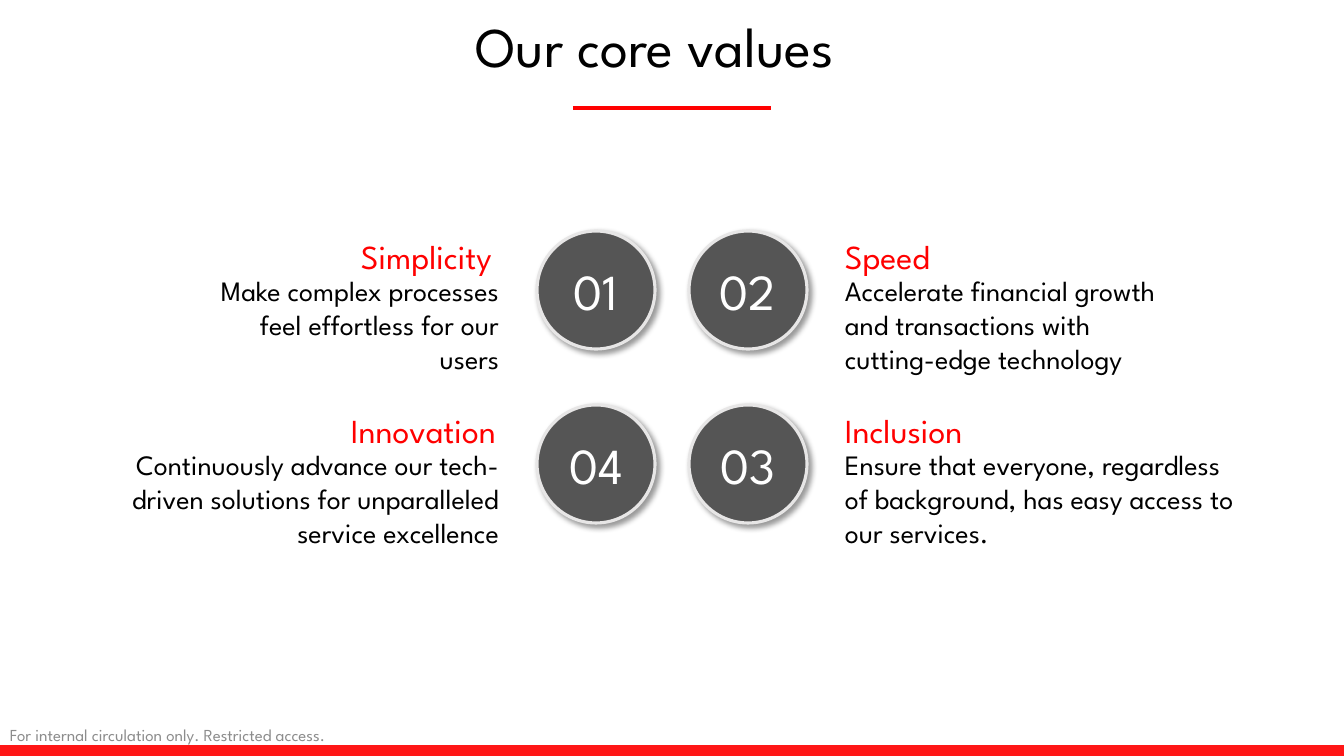
import pptx
import pptx.util
import pptx.dml.color
import pptx.enum.shapes
import pptx.enum.text
import pptx.oxml
import pptx.oxml.ns
from collections import namedtuple

RGBColor = pptx.dml.color.RGBColor
ALIGN = pptx.enum.text.PP_ALIGN
ANCHOR = pptx.enum.text.MSO_ANCHOR
SHAPE = pptx.enum.shapes.MSO_SHAPE

BLACK = RGBColor(0x00, 0x00, 0x00)
WHITE = RGBColor(0xFF, 0xFF, 0xFF)
RED = RGBColor(0xFF, 0x00, 0x00)
BAR_RED = RGBColor(0xFF, 0x16, 0x16)
DARK_GRAY = RGBColor(0x55, 0x55, 0x55)
RIM_GRAY = RGBColor(0xE7, 0xE6, 0xE6)
NOTE_GRAY = RGBColor(0x8C, 0x8C, 0x8C)

FONT = "League Spartan"
PAGE_WIDTH, PAGE_HEIGHT = 1344, 756
EMU_PER_PX = 12192000 / PAGE_WIDTH

CIRCLE = 118
BODY_DROP = 38    # from heading top to body top
TEXT_GAP = 28     # between a circle and its body text
ROW_TOPS = (231, 405)
LEFT_COLUMN, LEFT_WIDTH = 111, 544
RIGHT_COLUMN, RIGHT_WIDTH = 689, 556

Box = namedtuple("Box", "left top width height")
# heading_left counts from the left edge of the value's box
Value = namedtuple("Value", "number heading body heading_left body_width")

LEFT_VALUES = (
    Value("01", "Simplicity",
          "Make complex processes feel effortless for our users", 240, 308),
    Value("04", "Innovation",
          "Continuously advance our tech-driven solutions for unparalleled service excellence",
          230, 398),
)
RIGHT_VALUES = (
    Value("02", "Speed",
          "Accelerate financial growth and transactions with cutting-edge technology", 146, 355),
    Value("03", "Inclusion",
          "Ensure that everyone, regardless of background, has easy access to our services.",
          146, 410),
)


def px(length):
    return pptx.util.Emu(round(length * EMU_PER_PX))


def write(frame, text, size, color, align, anchor):
    frame.word_wrap = True
    frame.vertical_anchor = anchor
    para = frame.paragraphs[0]
    para.text = text
    para.alignment = align
    para.font.name = FONT
    para.font.size = pptx.util.Pt(size)
    para.font.color.rgb = color
    return para


def add_text(page, box, text, size, color, align=ALIGN.LEFT, anchor=ANCHOR.TOP):
    label = page.shapes.add_textbox(*map(px, box))
    return write(label.text_frame, text, size, color, align, anchor)


def add_soft_shadow(shape):
    namespace = pptx.oxml.ns.nsdecls("a")
    effects = pptx.oxml.parse_xml(
        f'<a:effectLst {namespace}>'
        '<a:outerShdw blurRad="50800" dist="38100" dir="2700000" algn="tl" rotWithShape="0">'
        '<a:srgbClr val="000000"><a:alpha val="40000"/></a:srgbClr>'
        '</a:outerShdw></a:effectLst>')
    shape._element.spPr.append(effects)


def add_header(page, box):
    # Title
    title_box = Box(box.left + 168, box.top, 973, 98)
    title = add_text(page, title_box, "Our core values", 40, BLACK, ALIGN.CENTER, ANCHOR.MIDDLE)
    title.line_spacing = 0.9

    # Red rule centred below it
    middle, half, rule_top = box.left + box.width / 2, 99, box.top + 108
    rule = page.shapes.add_connector(
        pptx.enum.shapes.MSO_CONNECTOR.STRAIGHT,
        px(middle - half), px(rule_top), px(middle + half), px(rule_top))
    rule.line.color.rgb = RED
    rule.line.width = pptx.util.Pt(3)
    rule._element.spPr.append(
        pptx.oxml.parse_xml(f'<a:effectLst {pptx.oxml.ns.nsdecls("a")}/>'))


def add_value(page, box, value, circle_on_right):
    # Numbered circle on the inner side
    circle_left = box.left + (box.width - CIRCLE if circle_on_right else 0)
    circle = page.shapes.add_shape(
        SHAPE.OVAL, *map(px, (circle_left, box.top, CIRCLE, CIRCLE)))
    circle.fill.solid()
    circle.fill.fore_color.rgb = DARK_GRAY
    circle.line.color.rgb = RIM_GRAY
    circle.line.width = pptx.util.Pt(2.25)
    add_soft_shadow(circle)
    write(circle.text_frame, value.number, 36, WHITE, ALIGN.CENTER, ANCHOR.MIDDLE)

    # Heading
    heading_box = Box(box.left + value.heading_left, box.top, 218, 50)
    add_text(page, heading_box, value.heading, 24, RED)

    # Body text, aligned towards the circle
    if circle_on_right:
        body_left = circle_left - TEXT_GAP - value.body_width
    else:
        body_left = circle_left + CIRCLE + TEXT_GAP
    body_box = Box(body_left, box.top + BODY_DROP, value.body_width, 112)
    add_text(page, body_box, value.body, 20, BLACK,
             ALIGN.RIGHT if circle_on_right else ALIGN.LEFT)


def add_footer(page, box):
    # Red bar along the bottom edge
    bar_height = 11
    bar = page.shapes.add_shape(
        SHAPE.RECTANGLE,
        *map(px, (box.left, box.top + box.height - bar_height, box.width, bar_height)))
    bar.shadow.inherit = False
    bar.fill.solid()
    bar.fill.fore_color.rgb = BAR_RED
    bar.line.fill.background()

    # Circulation note
    add_text(page, Box(box.left, box.top, 415, 30),
             "For internal circulation only. Restricted access.", 12, NOTE_GRAY,
             anchor=ANCHOR.BOTTOM)


def main():
    deck = pptx.Presentation()
    deck.slide_width, deck.slide_height = px(PAGE_WIDTH), px(PAGE_HEIGHT)
    page = deck.slides.add_slide(deck.slide_layouts[6])

    add_header(page, Box(0, 0, PAGE_WIDTH, 110))
    for top, left_value, right_value in zip(ROW_TOPS, LEFT_VALUES, RIGHT_VALUES):
        add_value(page, Box(LEFT_COLUMN, top, LEFT_WIDTH, 150), left_value, True)
        add_value(page, Box(RIGHT_COLUMN, top, RIGHT_WIDTH, 150), right_value, False)
    add_footer(page, Box(0, 720, PAGE_WIDTH, 36))

    deck.save("out.pptx")


if __name__ == "__main__":
    main()
